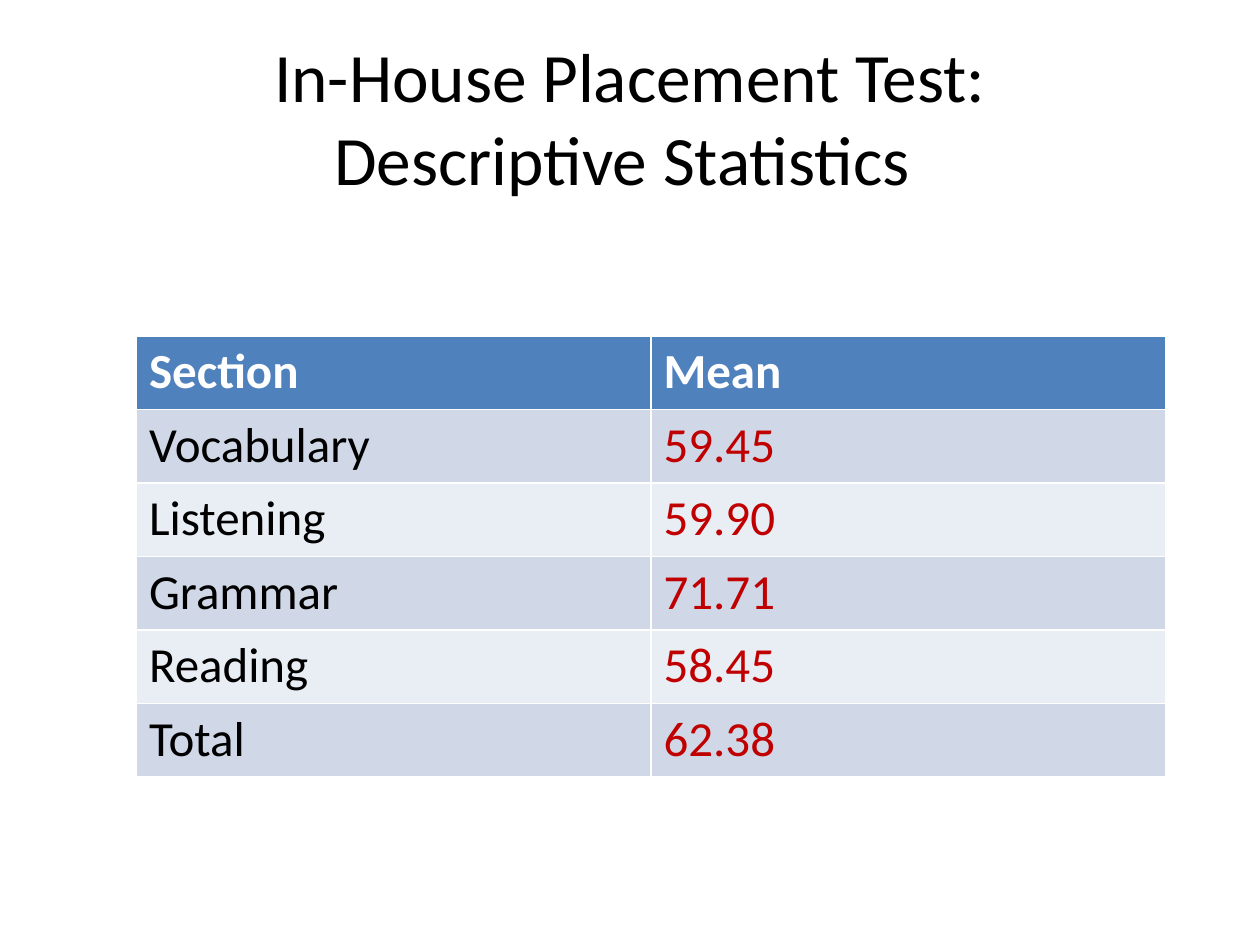
from pptx import Presentation
from pptx import util as u
from pptx.dml.color import RGBColor
from pptx.enum import text

PX = u.Inches(1) // 120
COLORS = {
    "title": "000000",
    "header_fill": "4F81BD",
    "header_text": "FFFFFF",
    "odd_band": "D0D8E8",
    "even_band": "E9EDF4",
    "section": "000000",
    "mean": "C00000",
}
COLUMN_WIDTH, ROW_HEIGHT = 490, 70
statistics = [
    ("Section", "Mean"),
    ("Vocabulary", "59.45"),
    ("Listening", "59.90"),
    ("Grammar", "71.71"),
    ("Reading", "58.45"),
    ("Total", "62.38"),
]


def style_run(run, size, color, bold=False):
    run.font.name = "Calibri"
    run.font.size = u.Pt(size)
    run.font.bold = bold
    run.font.color.rgb = RGBColor.from_string(COLORS[color])


deck = Presentation()
deck.slide_width, deck.slide_height = 1200 * PX, 900 * PX
slide = deck.slides.add_slide(deck.slide_layouts[5])

heading = slide.shapes.title
heading.left, heading.top, heading.width, heading.height = (
    n * PX for n in (60, 36, 1080, 150)
)
frame = heading.text_frame
frame.text = "In-House Placement Test:\vDescriptive Statistics "
frame.auto_size = text.MSO_AUTO_SIZE.NONE
frame.vertical_anchor = text.MSO_ANCHOR.MIDDLE
frame.paragraphs[0].alignment = text.PP_ALIGN.CENTER
for run in frame.paragraphs[0].runs:
    style_run(run, 39.6, "title")

means = slide.shapes.add_table(
    len(statistics), 2, 130 * PX, 320 * PX,
    2 * COLUMN_WIDTH * PX, len(statistics) * ROW_HEIGHT * PX,
).table

for r, record in enumerate(statistics):
    if r == 0:
        fill = "header_fill"
    else:
        fill = "odd_band" if r % 2 else "even_band"
    for c, value in enumerate(record):
        cell = means.cell(r, c)
        cell.fill.solid()
        cell.fill.fore_color.rgb = RGBColor.from_string(COLORS[fill])
        cell.text_frame.text = value
        color = ("section", "mean")[c] if r else "header_text"
        style_run(cell.text_frame.paragraphs[0].runs[0], 28, color, r == 0)

deck.save("out.pptx")
